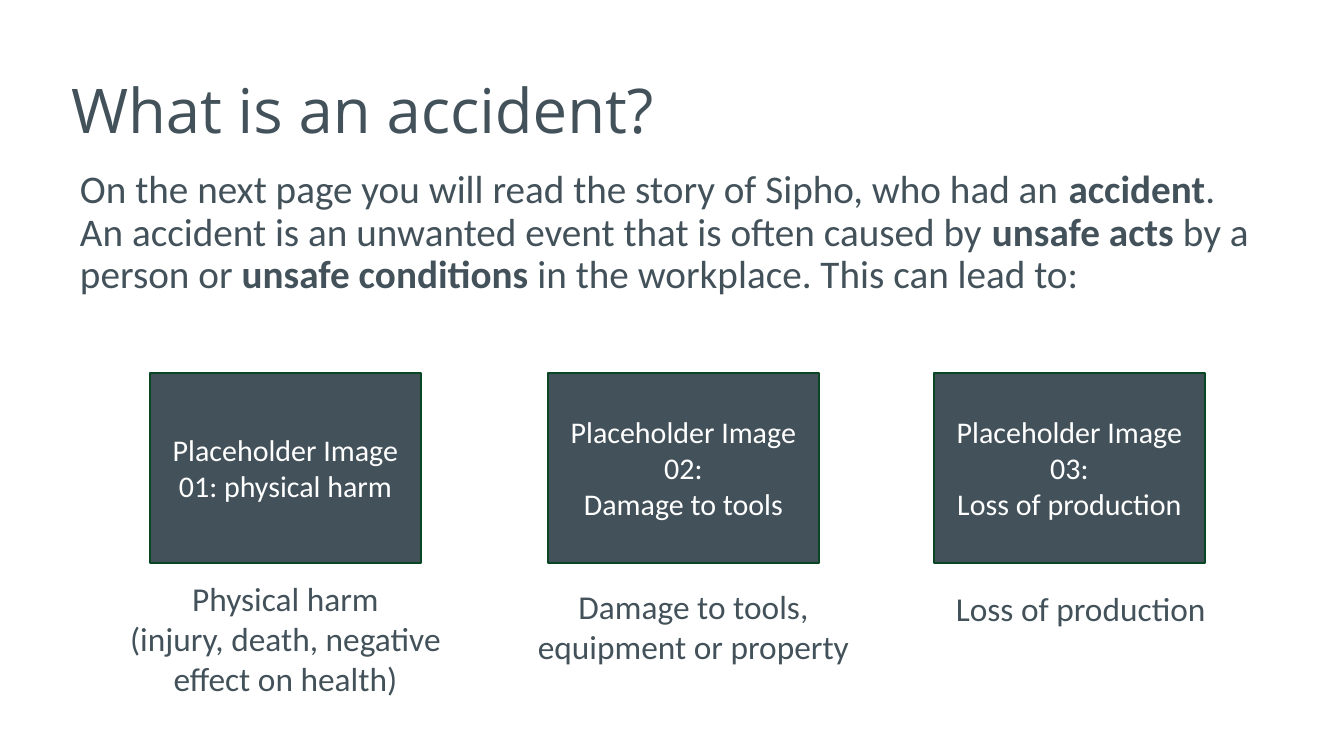
from pptx import Presentation
from pptx import util as u
from pptx.dml import color
from pptx.enum import shapes, text
from pptx.oxml import xmlchemy

SLATE, GREEN, WHITE = "43525A", "094724", "FFFFFF"
PX = 7620
SLIDE_SIZE = (1344, 756)

TITLE = "What is an accident?"
TITLE_BOX = (59, 41, 1159, 146)
INTRO = (
    "On the next page you will read the story of Sipho, who had an *accident*. \v"
    "An accident is an unwanted event that is often caused by *unsafe acts *by a person or "
    "*unsafe conditions *in the workplace. This can lead to:"
)
INTRO_BOX = (68, 164, 1218, 124)

CARD_TOP, CARD_WIDTH, CARD_HEIGHT = 373, 271, 190
CONSEQUENCES = [
    (150, "Placeholder Image 01: physical harm",
     "Physical harm\v(injury, death, negative effect on health)", (91, 572, 389, 174), "CENTER"),
    (548, "Placeholder Image 02:\nDamage to tools",
     "Damage to tools, equipment or property", (523, 580, 341, 92), "CENTER"),
    (934, "Placeholder Image 03:\nLoss of production",
     "Loss of production", (944, 582, 292, 53), "LEFT"),
]


def rgb(value):
    """Turn a hex string into a colour."""
    return color.RGBColor.from_string(value)


def place(shape, box):
    """Move and size a shape, in px."""
    shape.left, shape.top, shape.width, shape.height = (n * PX for n in box)


def write(shape, content, size, font="Calibri", ink=SLATE, align="LEFT", anchor="TOP",
          spacing=1.0, before=0, grow=False):
    """Fill a shape with text, where *stars* mark bold and each newline starts a paragraph."""
    frame = shape.text_frame
    frame.word_wrap = True
    frame.auto_size = text.MSO_AUTO_SIZE.SHAPE_TO_FIT_TEXT if grow else text.MSO_AUTO_SIZE.NONE
    frame.vertical_anchor = text.MSO_ANCHOR[anchor]
    for number, line in enumerate(content.split("\n")):
        paragraph = frame.add_paragraph() if number else frame.paragraphs[0]
        paragraph.alignment = text.PP_ALIGN[align]
        paragraph.line_spacing = spacing
        paragraph.space_before = u.Pt(before)
        for part, words in enumerate(line.split("*")):
            for piece, segment in enumerate(words.split("\v")):
                if piece:
                    paragraph.add_line_break()
                run = paragraph.add_run()
                run.text = segment
                run.font.name, run.font.size = font, u.Pt(size)
                run.font.bold = part % 2 == 1
                run.font.color.rgb = rgb(ink)


def remove_bullet(paragraph):
    """Set a list paragraph flush left without a bullet."""
    properties = paragraph._p.get_or_add_pPr()
    properties.set("marL", "0")
    properties.set("indent", "0")
    properties.append(xmlchemy.OxmlElement("a:buNone"))


def add_card(slide, left, label):
    """Draw one filled card with its label."""
    card = slide.shapes.add_shape(shapes.MSO_SHAPE.RECTANGLE, 0, 0, 0, 0)
    place(card, (left, CARD_TOP, CARD_WIDTH, CARD_HEIGHT))
    card.shadow.inherit = False
    card.fill.solid()
    card.fill.fore_color.rgb = rgb(SLATE)
    card.line.color.rgb = rgb(GREEN)
    card.line.width = u.Pt(1)
    write(card, label, 18, ink=WHITE, align="CENTER", anchor="MIDDLE")


def main():
    """Build the slide and save it."""
    presentation = Presentation()
    presentation.slide_width, presentation.slide_height = (n * PX for n in SLIDE_SIZE)
    slide = presentation.slides.add_slide(presentation.slide_layouts[1])
    title, intro = slide.placeholders
    place(title, TITLE_BOX)
    write(title, TITLE, 37, font="Open Sans", anchor="MIDDLE", spacing=0.9)
    place(intro, INTRO_BOX)
    write(intro, INTRO, 23.5, spacing=0.9, before=8.4)
    remove_bullet(intro.text_frame.paragraphs[0])
    for left, label, caption, box, align in CONSEQUENCES:
        add_card(slide, left, label)
        caption_box = slide.shapes.add_textbox(0, 0, 0, 0)
        place(caption_box, box)
        write(caption_box, caption, 20, align=align, grow=True)
    presentation.save("out.pptx")


if __name__ == "__main__":
    main()
